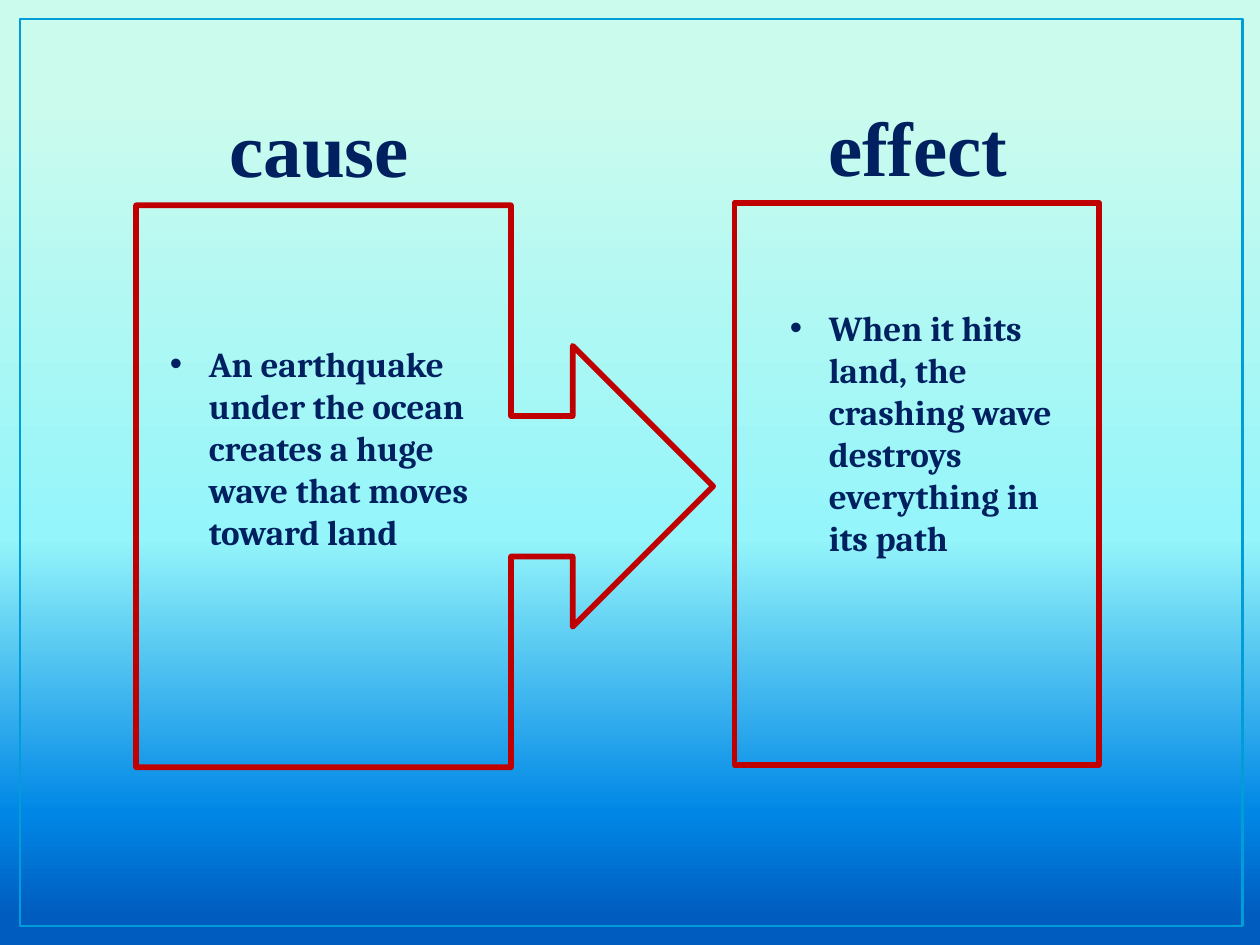
from copy import deepcopy

from lxml import etree
from pptx import Presentation
from pptx.dml.color import RGBColor
from pptx.enum.shapes import MSO_SHAPE
from pptx.enum.text import MSO_AUTO_SIZE, PP_ALIGN
from pptx.oxml.ns import qn
from pptx.util import Inches, Pt

RECT, CALLOUT = MSO_SHAPE.RECTANGLE, MSO_SHAPE.RIGHT_ARROW_CALLOUT
CENTER, LEFT = PP_ALIGN.CENTER, PP_ALIGN.LEFT
FIT_SHAPE = MSO_AUTO_SIZE.SHAPE_TO_FIT_TEXT

NAVY = RGBColor(0x00, 0x20, 0x60)
RED = RGBColor(0xC0, 0x00, 0x00)
FRAME_BLUE = RGBColor(0x00, 0x9D, 0xD9)
SEA_STOPS = [
    (0.11, RGBColor(0xCA, 0xFB, 0xED)),
    (0.57, RGBColor(0x94, 0xF5, 0xFA)),
    (0.86, RGBColor(0x00, 0x87, 0xE6)),
    (0.97, RGBColor(0x00, 0x5C, 0xBF)),
]
INDENT = Inches(0.31)


def add_background(s):
    fill = s.background.fill
    fill.gradient()
    fill.gradient_angle = 270  # top to bottom
    stop_list = next(s.element.iter(qn("a:gsLst")))
    while len(stop_list) < len(SEA_STOPS):
        stop_list.append(deepcopy(stop_list[0]))
    for stop, (position, color) in zip(fill.gradient_stops, SEA_STOPS):
        stop.position = position
        stop.color.rgb = color


def add_outline(shapes, kind, box, color, width):
    sp = shapes.add_shape(kind, *map(Inches, box))
    sp.shadow.inherit = False
    sp.fill.background()
    sp.line.color.rgb = color
    sp.line.width = Pt(width)
    return sp


def add_text(shapes, text, box, *, size, font, align=LEFT, bullet=False):
    tf = shapes.add_textbox(*map(Inches, box)).text_frame
    tf.word_wrap = True
    tf.auto_size = FIT_SHAPE
    p = tf.paragraphs[0]
    p.text = text
    p.alignment = align
    for r in p.runs:
        r.font.size = Pt(size)
        r.font.name = font
        r.font.bold = True
        r.font.color.rgb = NAVY
    if bullet:
        pPr = p._p.get_or_add_pPr()
        pPr.set("marL", str(INDENT))
        pPr.set("indent", str(-INDENT))
        etree.SubElement(pPr, qn("a:buFont"), typeface="Arial")
        etree.SubElement(pPr, qn("a:buChar"), char="•")


def add_panel(s, kind, box, heading, heading_box, body, body_box):
    """Group an outlined panel with its heading and bulleted text."""
    shapes = s.shapes.add_group_shape().shapes
    add_outline(shapes, kind, box, RED, 3.25)
    add_text(shapes, heading, heading_box, size=44,
             font="Times New Roman", align=CENTER)
    add_text(shapes, body, body_box, size=20, font="Cambria", bullet=True)


def main():
    prs = Presentation()
    prs.slide_width, prs.slide_height = Inches(10), Inches(7.5)
    s = prs.slides.add_slide(prs.slide_layouts[6])

    # Background and frame
    add_background(s)
    add_outline(s.shapes, RECT, (0.16, 0.15, 9.7, 7.2), FRAME_BLUE, 1.5)

    # Cause, with its arrow pointing to the effect
    add_panel(
        s, CALLOUT, (1.08, 1.63, 4.58, 4.46),
        "cause", (1.24, 0.75, 2.59, 0.84),
        "An earthquake under the ocean creates a huge wave that moves toward land",
        (1.25, 2.67, 2.62, 1.78))

    # Effect
    add_panel(
        s, RECT, (5.83, 1.61, 2.89, 4.46),
        "effect", (6.4, 0.74, 1.77, 0.84),
        "When it hits land, the crashing wave destroys everything in\nits path",
        (6.17, 2.38, 2.67, 2.12))

    prs.save("out.pptx")


if __name__ == "__main__":
    main()
